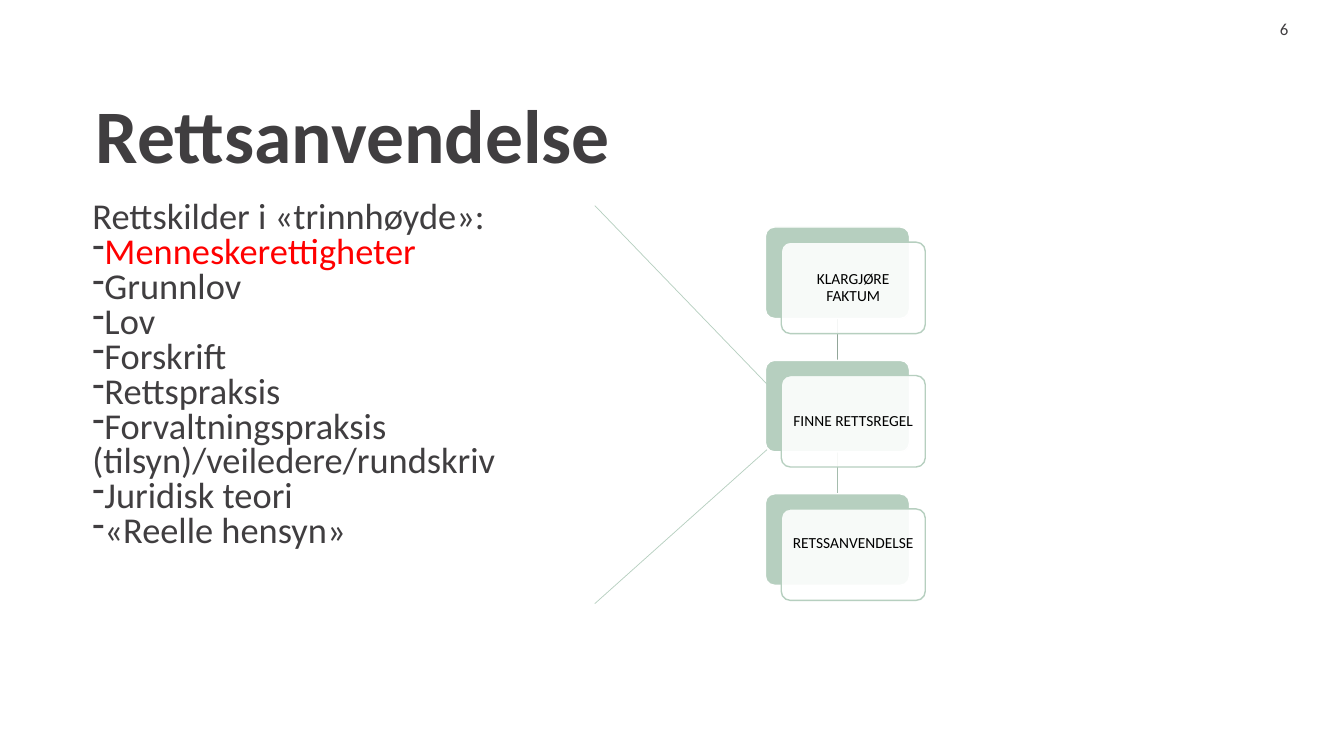
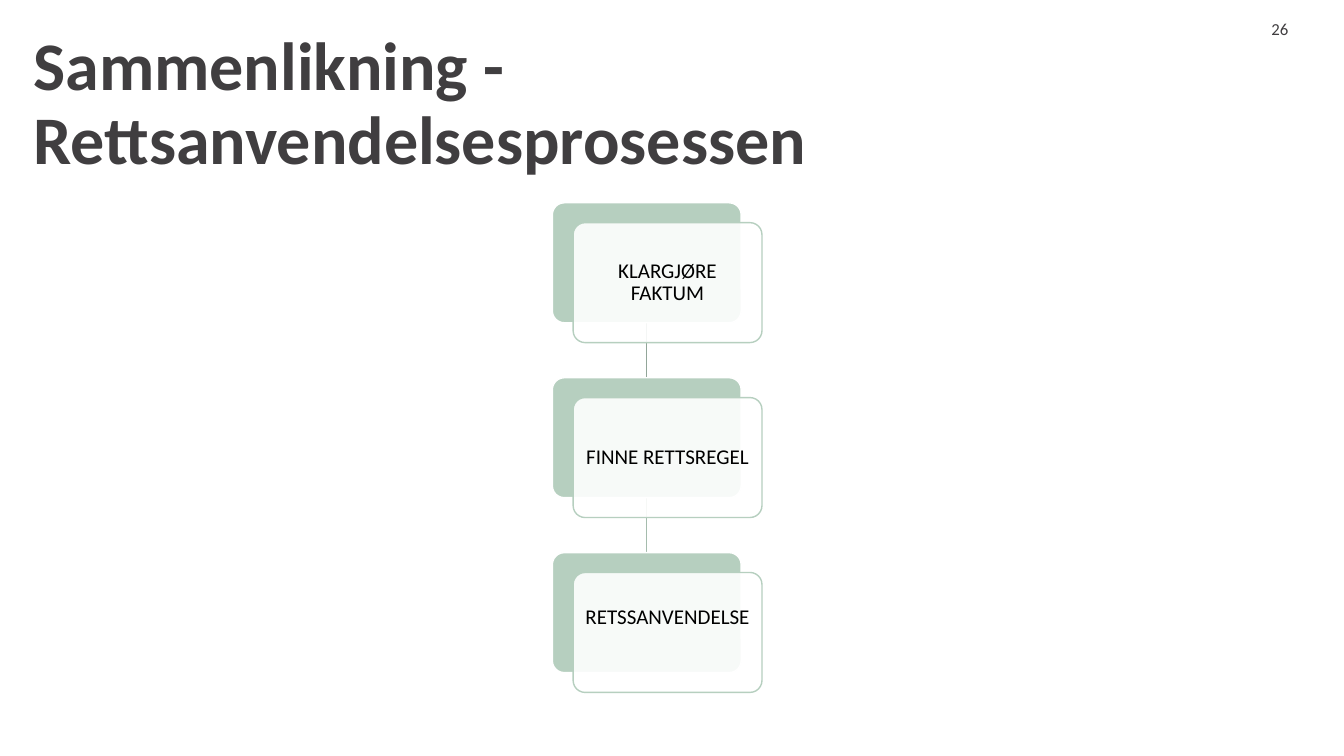
from lxml import etree
from pptx import Presentation
from pptx import util as u
from pptx.dml.color import RGBColor
from pptx.enum import shapes, text
from pptx.oxml.ns import qn

COLORS = {
    "ink": "403E40",
    "black": "000000",
    "white": "FFFFFF",
    "red": "FF0000",
    "sage": "B6CFBF",
    "upper_link": "92A699",
    "lower_link": "A5BCAD",
}
FONT = "Calibri"
STEPS = ["KLARGJØRE FAKTUM", "FINNE RETTSREGEL", "RETSSANVENDELSE"]
SOURCES_HEADING = "Rettskilder i «trinnhøyde»:"
HIGHLIGHTED = "Menneskerettigheter"
SOURCES = [
    HIGHLIGHTED, "Grunnlov", "Lov", "Forskrift", "Rettspraksis",
    "Forvaltningspraksis (tilsyn)/veiledere/rundskriv",
    "Juridisk teori", "«Reelle hensyn»",
]


def rgb(name):
    return RGBColor.from_string(COLORS[name])


# Text
def write(frame, lines, size, color="ink", bold=False, align=text.PP_ALIGN.LEFT,
          anchor=text.MSO_ANCHOR.TOP, spacing=1.0, inset=0):
    """Fill a text frame with one paragraph per line and return the paragraphs."""
    frame.word_wrap = True
    frame.auto_size = text.MSO_AUTO_SIZE.NONE
    frame.vertical_anchor = anchor
    frame.margin_left = frame.margin_right = u.Cm(inset)
    frame.margin_top = frame.margin_bottom = u.Cm(inset)
    frame.text = "\n".join(lines)
    for paragraph in frame.paragraphs:
        paragraph.alignment = align
        paragraph.line_spacing = spacing
        font = paragraph.runs[0].font
        font.name, font.size, font.bold = FONT, u.Pt(size), bold
        font.color.rgb = rgb(color)
    return frame.paragraphs


def add_dash(paragraph):
    props = paragraph._p.get_or_add_pPr()
    props.set("marL", "0")
    props.set("indent", "0")
    bullet_color = etree.SubElement(props, qn("a:buClr"))
    etree.SubElement(bullet_color, qn("a:srgbClr"), val=COLORS["ink"])
    etree.SubElement(props, qn("a:buChar"), char="-")


# Lines and cards
def add_line(slide, start, end, color, weight):
    line = slide.shapes.add_connector(
        shapes.MSO_CONNECTOR.STRAIGHT, *map(u.Cm, start + end))
    line.line.color.rgb = rgb(color)
    line.line.width = u.Pt(weight)
    etree.SubElement(line._element.spPr, qn("a:effectLst"))


def add_card(slide, box, fill, outline, opacity=100):
    card = slide.shapes.add_shape(
        shapes.MSO_SHAPE.ROUNDED_RECTANGLE, *map(u.Cm, box))
    card.adjustments[0] = 0.1
    card.shadow.inherit = False
    card.fill.solid()
    card.fill.fore_color.rgb = rgb(fill)
    card.line.color.rgb = rgb(outline)
    card.line.width = u.Pt(1)
    if opacity < 100:
        fill_color = card._element.spPr.find(qn("a:solidFill"))[0]
        etree.SubElement(fill_color, qn("a:alpha"), val=str(opacity * 1000))
    return card


# Parts shared by the slides
def add_titled_slide(prs, title, box, size, number):
    slide = prs.slides.add_slide(prs.slide_layouts[5])
    heading = slide.shapes.title
    heading.left, heading.top, heading.width, heading.height = map(u.Cm, box)
    write(heading.text_frame, [title], size, bold=True, spacing=0.9,
          anchor=text.MSO_ANCHOR.BOTTOM)
    page = slide.shapes.add_textbox(*map(u.Cm, (28.58, 0.46, 3.89, 0.51)))
    write(page.text_frame, [number], 12, align=text.PP_ALIGN.RIGHT,
          anchor=text.MSO_ANCHOR.MIDDLE)
    return slide


def add_process(slide, left, top, width, size, inset):
    """Stack the steps; every measure follows from the card width."""
    height, pitch = 0.635 * width, 0.926 * width
    shift_x, shift_y = 0.11 * width, 0.105 * width
    middle = left + width / 2

    # Links between the cards
    for index, color in enumerate(["upper_link", "lower_link"]):
        bottom = top + index * pitch + height
        add_line(slide, (middle, bottom), (middle, top + (index + 1) * pitch),
                 color, 1)

    # Back card and translucent label card
    for index, step in enumerate(STEPS):
        y = top + index * pitch
        add_card(slide, (left, y, width, height), "sage", "white")
        label = add_card(slide, (left + shift_x, y + shift_y, width, height),
                         "white", "sage", opacity=90)
        write(label.text_frame, [step], size, color="black", spacing=0.9,
              align=text.PP_ALIGN.CENTER, anchor=text.MSO_ANCHOR.MIDDLE,
              inset=inset)
    # The last label sits above the centre of its card
    label.text_frame.margin_bottom = u.Cm(inset + 0.05 * size)


def add_sources(slide, box):
    sources = slide.shapes.add_textbox(*map(u.Cm, box))
    heading, *items = write(sources.text_frame, [SOURCES_HEADING] + SOURCES,
                            26, spacing=0.8)
    for item in items:
        add_dash(item)
        if item.text == HIGHLIGHTED:
            item.runs[0].font.color.rgb = rgb("red")


def add_funnel(slide, left, right, wide, narrow):
    """Draw two lines from the wide span at left to the narrow one at right."""
    for outer, inner in zip(wide, narrow):
        add_line(slide, (right, inner), (left, outer), "sage", 0.5)


# Slides
def build_sources_slide(prs):
    slide = add_titled_slide(prs, "Rettsanvendelse", (2.41, 1.6, 19.18, 2.92),
                             54, "6")
    add_sources(slide, (2.33, 5.08, 14.4, 12.09))
    add_process(slide, left=19.29, top=5.72, width=3.63, size=11, inset=0.13)
    add_funnel(slide, 14.99, 19.33, wide=(5.18, 15.21), narrow=(9.68, 11.33))


def build_process_slide(prs):
    slide = add_titled_slide(prs, "Sammenlikning - Rettsanvendelsesprosessen",
                             (0.84, 0.98, 20.75, 3.53), 48.6, "26")
    add_process(slide, left=13.92, top=5.11, width=4.76, size=15, inset=0.15)


def main():
    prs = Presentation()
    prs.slide_width, prs.slide_height = u.Cm(33.87), u.Cm(19.05)
    build_sources_slide(prs)
    build_process_slide(prs)
    prs.save("out.pptx")


if __name__ == "__main__":
    main()
